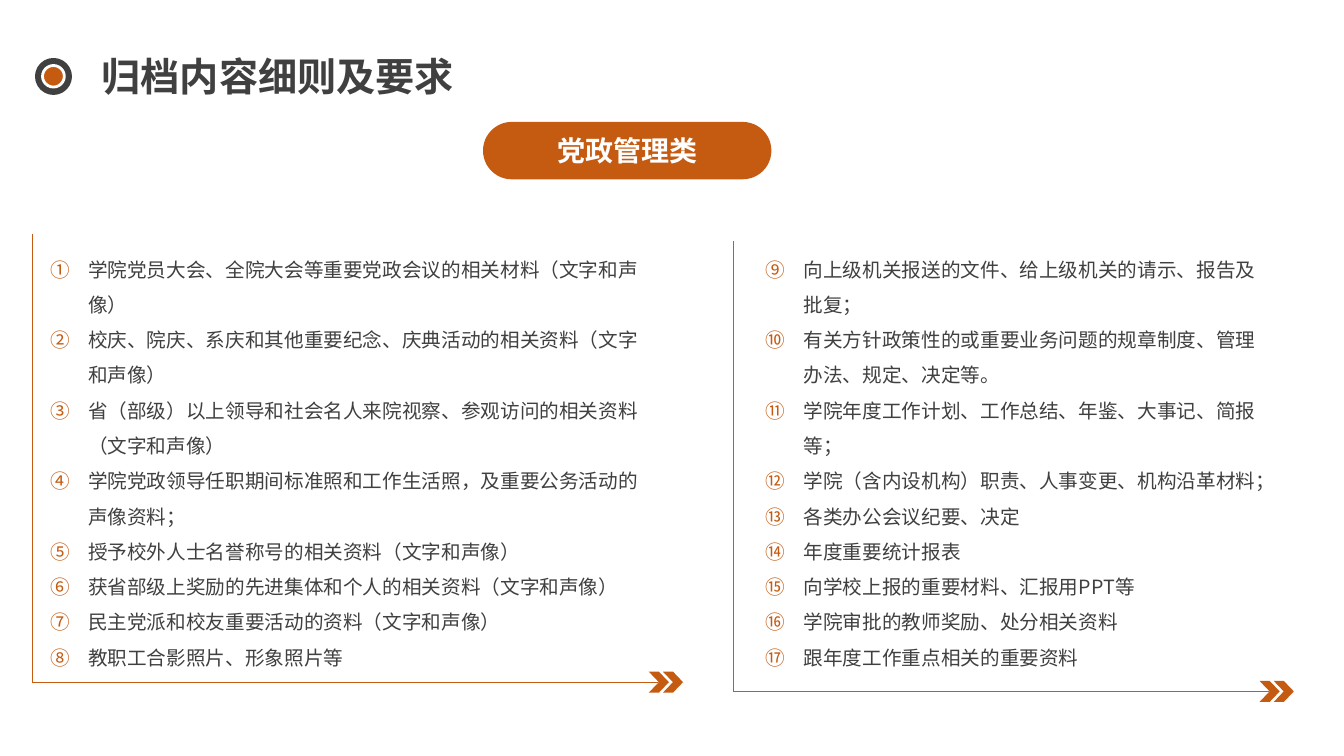
"""Build the slide on archiving rules for party and administration records."""
from dataclasses import dataclass

from lxml import etree
from pptx import Presentation
from pptx.dml.color import RGBColor
from pptx.enum.shapes import MSO_CONNECTOR, MSO_SHAPE
from pptx.enum.text import MSO_ANCHOR, MSO_AUTO_SIZE, PP_ALIGN
from pptx.oxml.ns import qn
from pptx.util import Pt

STRAIGHT = MSO_CONNECTOR.STRAIGHT
OVAL, PILL, CHEVRON = MSO_SHAPE.OVAL, MSO_SHAPE.ROUNDED_RECTANGLE, MSO_SHAPE.CHEVRON
MIDDLE, CENTER, GROW = MSO_ANCHOR.MIDDLE, PP_ALIGN.CENTER, MSO_AUTO_SIZE.SHAPE_TO_FIT_TEXT


@dataclass(frozen=True)
class Theme:
    """Colours, fonts and type sizes."""
    accent: str = "C55A11"
    dark: str = "404040"
    ring: str = "458388"
    white: str = "FFFFFF"
    sc: str = "Noto Sans CJK SC"
    jp: str = "Noto Sans CJK JP"
    title: float = 28
    label: float = 20
    body: float = 14
    rule: float = 0.75
    indent: float = 27


PARTY_RECORDS = [
    "学院党员大会、全院大会等重要党政会议的相关材料（文字和声像）",
    "校庆、院庆、系庆和其他重要纪念、庆典活动的相关资料（文字和声像）",
    "省（部级）以上领导和社会名人来院视察、参观访问的相关资料（文字和声像）",
    "学院党政领导任职期间标准照和工作生活照，及重要公务活动的声像资料；",
    "授予校外人士名誉称号的相关资料（文字和声像）",
    "获省部级上奖励的先进集体和个人的相关资料（文字和声像）",
    "民主党派和校友重要活动的资料（文字和声像）",
    "教职工合影照片、形象照片等",
]
OFFICE_RECORDS = [
    "向上级机关报送的文件、给上级机关的请示、报告及批复；",
    "有关方针政策性的或重要业务问题的规章制度、管理办法、规定、决定等。",
    "学院年度工作计划、工作总结、年鉴、大事记、简报等；",
    "学院（含内设机构）职责、人事变更、机构沿革材料；",
    "各类办公会议纪要、决定",
    "年度重要统计报表",
    "向学校上报的重要材料、汇报用PPT等",
    "学院审批的教师奖励、处分相关资料",
    "跟年度工作重点相关的重要资料",
]


class Deck:
    """Draws styled elements on the current slide."""

    def __init__(self, s, theme):
        self.s, self.theme = s, theme

    def style(self, p, size, color, font, bold=False):
        """Format every run of a paragraph."""
        for r in p.runs:
            r.font.size, r.font.bold = Pt(size), bold
            r.font.color.rgb = RGBColor.from_string(color)
            r.font.name = font
            etree.SubElement(r.font._element, qn("a:ea"), typeface=font)

    def shape(self, kind, box, fill, line=None, width=0):
        """Add a filled preset shape."""
        sp = self.s.shapes.add_shape(kind, *map(Pt, box))
        sp.shadow.inherit = False
        sp.fill.solid()
        sp.fill.fore_color.rgb = RGBColor.from_string(fill)
        if line:
            sp.line.color.rgb = RGBColor.from_string(line)
            sp.line.width = Pt(width)
        else:
            sp.line.fill.background()
        return sp

    def line(self, *ends):
        """Add a thin accent rule."""
        cx = self.s.shapes.add_connector(STRAIGHT, *map(Pt, ends))
        cx.line.color.rgb = RGBColor.from_string(self.theme.accent)
        cx.line.width = Pt(self.theme.rule)
        etree.SubElement(cx._element.spPr, qn("a:effectLst"))

    def text(self, box, text):
        """Add a wrapping text box and return its frame."""
        tf = self.s.shapes.add_textbox(*map(Pt, box)).text_frame
        tf.word_wrap, tf.auto_size = True, GROW
        tf.text = text
        return tf

    def title(self, text):
        """Add the heading with its bullseye."""
        t = self.theme
        self.shape(OVAL, (29, 45.4, 18.4, 18.4), t.ring, t.dark, 8)
        self.shape(OVAL, (30.4, 46.8, 15.6, 15.4), t.accent, t.white, 2)
        tf = self.text((65.5, 33.8, 354, 41), text)
        self.style(tf.paragraphs[0], t.title, t.dark, t.sc, True)

    def pill(self, box, text):
        """Add the category label."""
        t = self.theme
        sp = self.shape(PILL, box, t.accent)
        sp.adjustments[0] = 0.5
        tf = sp.text_frame
        tf.text, tf.vertical_anchor = text, MIDDLE
        p = tf.paragraphs[0]
        p.alignment = CENTER
        self.style(p, t.label, t.white, t.jp, True)

    def numbered(self, box, items, start, jp_count):
        """Add a list with circled numbers."""
        t = self.theme
        tf = self.text(box, "\n".join(items))
        for i, p in enumerate(tf.paragraphs):
            p.line_spacing = 1.5
            pPr = p._p.get_or_add_pPr()
            pPr.set("marL", str(Pt(t.indent)))
            pPr.set("indent", str(-Pt(t.indent)))
            clr = etree.SubElement(pPr, qn("a:buClr"))
            etree.SubElement(clr, qn("a:srgbClr"), val=t.accent)
            etree.SubElement(pPr, qn("a:buFont"), typeface=t.sc)
            etree.SubElement(pPr, qn("a:buAutoNum"), type="circleNumDbPlain", startAt=str(start))
            self.style(p, t.body, t.dark, t.jp if i < jp_count else t.sc)

    def frame(self, left, top, right, bottom):
        """Add an L-shaped rule ending in a double chevron."""
        self.line(left, top, left, bottom + 0.5)
        self.line(right, bottom, left, bottom)
        for i in range(2):
            self.shape(CHEVRON, (right - 6.8 + i * 10.1, bottom - 7.7, 14.4, 15.1), self.theme.accent)


def main():
    """Build and save the slide."""
    prs = Presentation()
    prs.slide_width, prs.slide_height = Pt(960), Pt(540)
    deck = Deck(prs.slides.add_slide(prs.slide_layouts[6]), Theme())
    deck.title("归档内容细则及要求")
    deck.pill((345, 87.1, 206, 41), "党政管理类")
    deck.numbered((28.8, 172, 435.6, 309.6), PARTY_RECORDS, 1, 4)
    deck.frame(23, 167, 470.2, 487.4)
    deck.numbered((540, 172, 365.8, 309.6), OFFICE_RECORDS, 9, 0)
    deck.frame(524.2, 172, 906.5, 494)
    prs.save("out.pptx")


if __name__ == "__main__":
    main()
